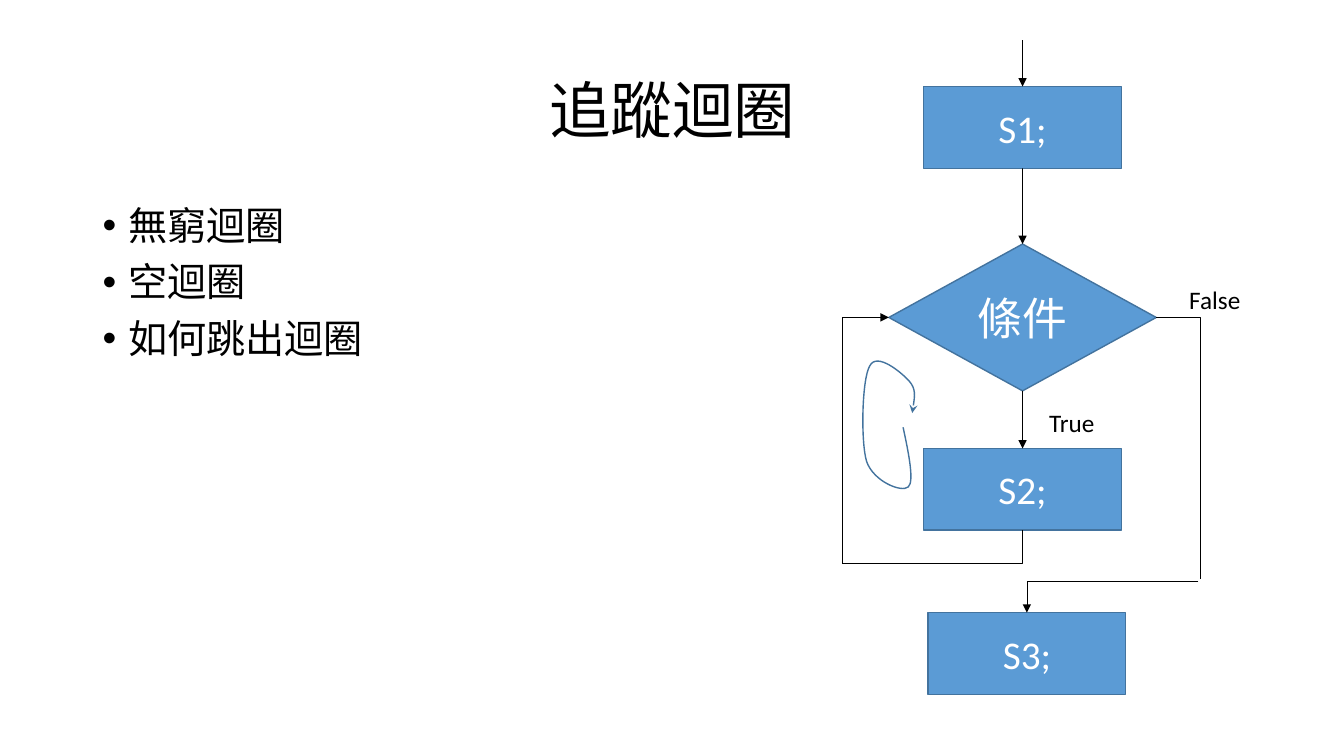
import pptx
import pptx.dml.color
import pptx.enum.shapes
import pptx.enum.text
import pptx.oxml.ns
import pptx.util
from lxml import etree

Cm, Pt = pptx.util.Cm, pptx.util.Pt
qn = pptx.oxml.ns.qn
SHAPE = pptx.enum.shapes.MSO_SHAPE
CONNECTOR = pptx.enum.shapes.MSO_CONNECTOR
ALIGN = pptx.enum.text.PP_ALIGN
ANCHOR = pptx.enum.text.MSO_ANCHOR
BLACK = pptx.dml.color.RGBColor(0x00, 0x00, 0x00)
WHITE = pptx.dml.color.RGBColor(0xFF, 0xFF, 0xFF)
BLUE = pptx.dml.color.RGBColor(0x5B, 0x9B, 0xD5)
OUTLINE = pptx.dml.color.RGBColor(0x43, 0x73, 0x9E)
TOP, BOTTOM = 0, 2


def write(shape, lines, size, color, paragraph=None, frame=None):
    """Fill a shape with one paragraph per line; the dicts hold format values."""
    tf = shape.text_frame
    for name, value in (frame or {}).items():
        setattr(tf, name, value)
    for i, line in enumerate(lines):
        p = tf.paragraphs[0] if i == 0 else tf.add_paragraph()
        for name, value in (paragraph or {}).items():
            setattr(p, name, value)
        r = p.add_run()
        r.text = line
        for name, value in {"name": "Calibri", "size": Pt(size)}.items():
            setattr(r.font, name, value)
        r.font.color.rgb = color


def style_line(shape, color, width, arrow=None):
    shape.line.color.rgb = color
    shape.line.width = Pt(width)
    sp_pr = shape._element.spPr
    if arrow:
        etree.SubElement(sp_pr.find(qn("a:ln")), qn("a:tailEnd"), type=arrow)
    if sp_pr.find(qn("a:effectLst")) is None:
        etree.SubElement(sp_pr, qn("a:effectLst"))


prs = pptx.Presentation()
prs.slide_width, prs.slide_height = Cm(33.87), Cm(19.05)
s = prs.slides.add_slide(prs.slide_layouts[6])

# Title and bullets
title = s.shapes.add_textbox(Cm(2.34), Cm(1.02), Cm(29.21), Cm(3.68))
write(title, ["追蹤迴圈"], 44, BLACK,
      {"alignment": ALIGN.CENTER, "line_spacing": 0.9},
      {"word_wrap": True, "vertical_anchor": ANCHOR.MIDDLE})
body = s.shapes.add_textbox(Cm(2.34), Cm(5.08), Cm(29.21), Cm(12.09))
write(body, ["無窮迴圈", "空迴圈", "如何跳出迴圈"], 28, BLACK,
      {"line_spacing": 0.9, "space_before": Pt(10)}, {"word_wrap": True})
for p in body.text_frame.paragraphs:
    pPr = p._p.get_or_add_pPr()
    pPr.set("marL", str(Cm(0.64)))
    pPr.set("indent", str(-Cm(0.64)))
    etree.SubElement(pPr, qn("a:buFont"), typeface="Arial")
    etree.SubElement(pPr, qn("a:buChar"), char="•")

# Flowchart nodes: text, shape, centre x, top, width, height, text size
axis, exit_axis = 25.77, 25.88
nodes = {}
for text, kind, center, top, width, height, size in [
    ("S1;", SHAPE.FLOWCHART_PROCESS, axis, 2.18, 4.98, 2.06, 28),
    ("條件", SHAPE.FLOWCHART_DECISION, axis, 6.15, 6.74, 3.7, 32),
    ("S2;", SHAPE.FLOWCHART_PROCESS, axis, 11.3, 4.98, 2.06, 28),
    ("S3;", SHAPE.FLOWCHART_PROCESS, exit_axis, 15.44, 4.98, 2.06, 28),
]:
    sp = s.shapes.add_shape(kind, Cm(center - width / 2), Cm(top), Cm(width), Cm(height))
    sp.shadow.inherit = False
    sp.fill.solid()
    sp.fill.fore_color.rgb = BLUE
    style_line(sp, OUTLINE, 1)
    write(sp, [text], size, WHITE, {"alignment": ALIGN.CENTER},
          {"vertical_anchor": ANCHOR.MIDDLE})
    nodes[text] = sp

# Straight arrows down the main axis
for source, target in [(None, "S1;"), ("S1;", "條件"), ("條件", "S2;")]:
    c = s.shapes.add_connector(CONNECTOR.STRAIGHT, Cm(axis), Cm(1.02), Cm(axis), Cm(2.18))
    if source:
        c.begin_connect(nodes[source], BOTTOM)
    c.end_connect(nodes[target], TOP)
    style_line(c, BLACK, 0.5, "triangle")

# One-bend connectors: start, end, whether the first leg is vertical, arrowhead
loop_x, loop_y, middle_y = 21.23, 14.2, 8
for (x1, y1), (x2, y2), vertical_first, arrow in [
    ((axis, 13.36), (loop_x, loop_y), True, None),
    ((loop_x, loop_y), (22.4, middle_y), True, "triangle"),
    ((29.14, middle_y), (30.25, 14.6), False, None),
    ((30.2, 14.66), (exit_axis, 15.44), False, "triangle"),
]:
    if vertical_first:  # lay the box on its side, then turn it by 90 degrees
        cx, cy, dx, dy = (x1 + x2) / 2, (y1 + y2) / 2, x2 - x1, y2 - y1
        x1, x2 = cx - dy / 2, cx + dy / 2
        y1, y2 = cy + dx / 2, cy - dx / 2
    c = s.shapes.add_connector(CONNECTOR.ELBOW, Cm(x1), Cm(y1), Cm(x2), Cm(y2))
    sp_pr = c._element.spPr
    sp_pr.find(qn("a:prstGeom")).set("prst", "bentConnector2")
    if vertical_first:
        sp_pr.find(qn("a:xfrm")).set("rot", "5400000")
    style_line(c, BLACK, 0.5, arrow)

# Branch labels
for text, left, top, width in [("True", 26.19, 10.13, 1.68), ("False", 29.72, 7.04, 1.8)]:
    label = s.shapes.add_textbox(Cm(left), Cm(top), Cm(width), Cm(1.8))
    write(label, [text], 18, BLACK, frame={"word_wrap": False})

# Loop arrow: a start point, then three Bézier points for each curve
points = [(Cm(x), Cm(y)) for x, y in [
    (22.76, 10.77),
    (22.91, 11.46), (23.04, 12.14), (22.89, 12.27),
    (22.73, 12.42), (22.02, 12.14), (21.84, 11.63),
    (21.69, 11.13), (21.72, 9.55), (21.92, 9.22),
    (22.1, 8.86), (22.73, 9.4), (22.91, 9.6),
    (23.09, 9.8), (23.04, 10.11), (22.99, 10.41),
]]
builder = s.shapes.build_freeform(*points[0])
builder.add_line_segments(points[1:], close=False)
loop = builder.convert_to_shape()
loop.shadow.inherit = False
loop.fill.background()
style_line(loop, OUTLINE, 1, "stealth")
outline = next(loop._element.iter(qn("a:path")))
legs = outline.findall(qn("a:lnTo"))
for i in range(0, len(legs), 3):
    curve = etree.SubElement(outline, qn("a:cubicBezTo"))
    for leg in legs[i:i + 3]:
        curve.append(leg[0])
        outline.remove(leg)

prs.save("out.pptx")
